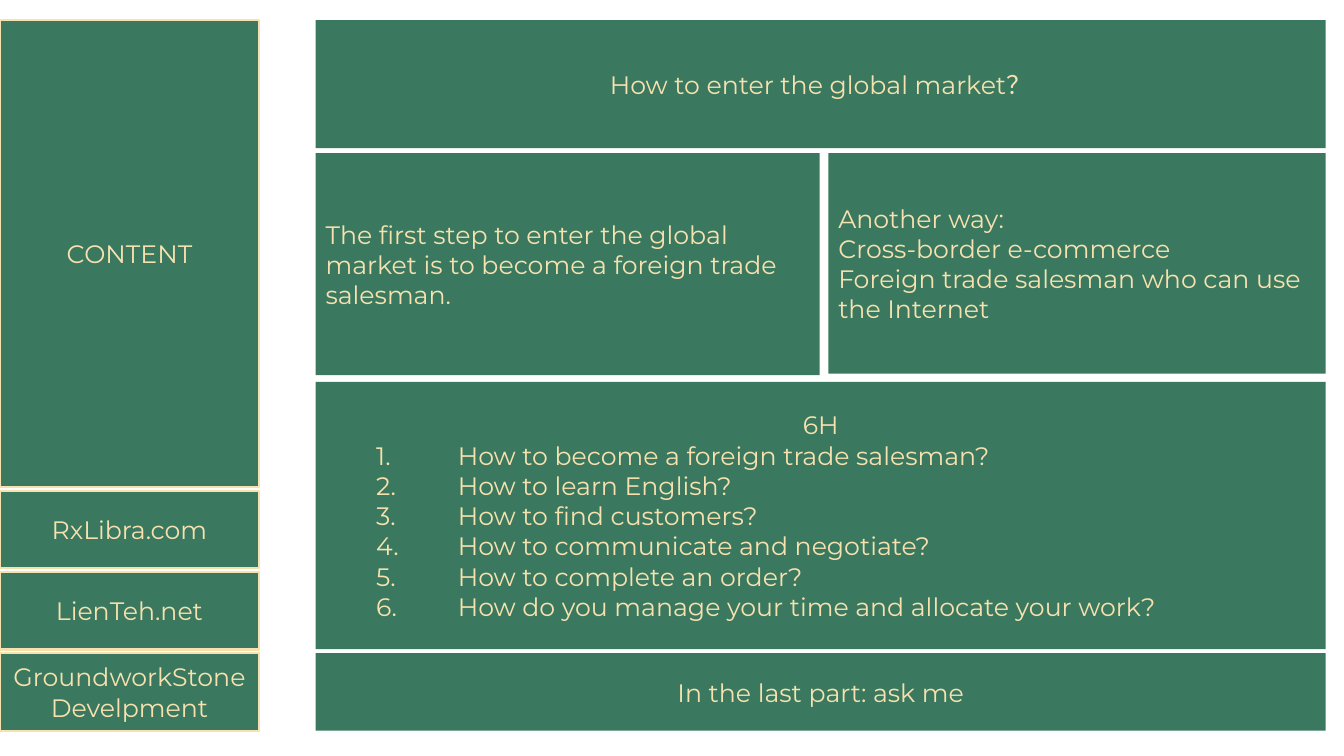
from lxml import etree
from pptx import Presentation
from pptx.dml.color import RGBColor
from pptx.enum.shapes import MSO_SHAPE
from pptx.enum.text import MSO_ANCHOR, MSO_AUTO_SIZE, PP_ALIGN
from pptx.oxml.ns import qn
from pptx.util import Pt

RECTANGLE = MSO_SHAPE.RECTANGLE
MIDDLE = MSO_ANCHOR.MIDDLE
NO_FIT = MSO_AUTO_SIZE.NONE
LEFT, CENTER = PP_ALIGN.LEFT, PP_ALIGN.CENTER

GREEN, CREAM = "3A795F", "F7E1AF"
TEXT_FORMAT = {"name": "Montserrat", "size": Pt(18), "bold": False}
FRAME_FORMAT = {"word_wrap": True, "auto_size": NO_FIT, "vertical_anchor": MIDDLE}
PARA_FORMAT = {"space_before": Pt(0), "space_after": Pt(0), "line_spacing": 1.0}
NUMBER_MARGIN, NUMBER_INDENT = 94.3, -58.3

SIDE_LABELS = ["RxLibra.com", "LienTeh.net", "GroundworkStone Develpment"]
WAYS = [
    "Another way:",
    "Cross-border e-commerce",
    "Foreign trade salesman who can use the Internet",
]
QUESTIONS = [
    "How to become a foreign trade salesman?",
    "How to learn English?",
    "How to find customers?",
    "How to communicate and negotiate?",
    "How to complete an order?",
    "How do you manage your time and allocate your work?",
]


def color(value):
    return RGBColor.from_string(value)


def apply_format(target, values):
    for name, value in values.items():
        setattr(target, name, value)


def set_bullet(para, numbered):
    """Number the paragraph, or clear the bullet it inherits."""
    properties = para._p.get_or_add_pPr()
    margin, indent = (NUMBER_MARGIN, NUMBER_INDENT) if numbered else (0, 0)
    properties.set("marL", str(Pt(margin)))
    properties.set("indent", str(Pt(indent)))
    if numbered:
        font = etree.SubElement(properties, qn("a:buFont"))
        font.set("typeface", "+mj-lt")
        etree.SubElement(properties, qn("a:buAutoNum")).set("type", "arabicPeriod")
    else:
        etree.SubElement(properties, qn("a:buNone"))


def add_panel(page, box, lines, align=CENTER, outlined=False, holder=None, numbered_from=None):
    """Green panel; a placeholder is restyled when one is given."""
    left, top, width, height = (Pt(length) for length in box)
    if holder is None:
        panel = page.shapes.add_shape(RECTANGLE, left, top, width, height)
        panel.shadow.inherit = False
    else:
        panel = holder
        apply_format(panel, {"left": left, "top": top, "width": width, "height": height})
    panel.fill.solid()
    panel.fill.fore_color.rgb = color(GREEN)
    if outlined:
        panel.line.color.rgb = color(CREAM)
        panel.line.width = Pt(1.5)
    else:
        panel.line.fill.background()

    frame = panel.text_frame
    apply_format(frame, FRAME_FORMAT)
    for index, line in enumerate(lines):
        para = frame.add_paragraph() if index else frame.paragraphs[0]
        numbered = numbered_from is not None and index >= numbered_from
        apply_format(para, PARA_FORMAT)
        para.alignment = LEFT if numbered else align
        set_bullet(para, numbered)
        span = para.add_run()
        span.text = line
        apply_format(span.font, TEXT_FORMAT)
        span.font.color.rgb = color(CREAM)


def add_sidebar(page, box):
    """Tall heading panel above equal label panels."""
    left, top, width, height = box
    label_height, step = 55.4, 58
    labels_top = top + height - label_height - step * (len(SIDE_LABELS) - 1)
    heading_height = labels_top - (step - label_height) - top
    add_panel(page, (left, top, width, heading_height), ["CONTENT"], outlined=True)
    for index, label in enumerate(SIDE_LABELS):
        label_box = (left, labels_top + index * step, width, label_height)
        add_panel(page, label_box, [label], outlined=True)


def add_main(page, box):
    """Title, two columns, numbered questions and closing line."""
    left, top, width, height = box
    body = page.placeholders[1]
    add_panel(page, (left, top, width, 91.4),
              ["How to enter the global market？"], holder=page.shapes.title)
    # Two columns
    columns_top, first_width, second_offset = top + 95, 360, 366.2
    add_panel(page, (left, columns_top, first_width, 158.6),
              ["The first step to enter the global market is to become a foreign trade salesman."],
              align=LEFT)
    add_panel(page, (left + second_offset, columns_top, width - second_offset, 157.6),
              WAYS, align=LEFT)
    # Numbered questions
    add_panel(page, (left, top + 258.3, width, 191), ["6H"] + QUESTIONS,
              holder=body, numbered_from=1)
    # Closing line
    closing_height = 55.4
    add_panel(page, (left, top + height - closing_height, width, closing_height),
              ["In the last part: ask me"])


def main():
    deck = Presentation()
    deck.slide_width, deck.slide_height = Pt(960), Pt(540)
    page = deck.slides.add_slide(deck.slide_layouts[1])
    add_sidebar(page, (0, 14.4, 185, 507.6))
    add_main(page, (225.5, 14.4, 721.5, 507.6))
    deck.save("out.pptx")


if __name__ == "__main__":
    main()
